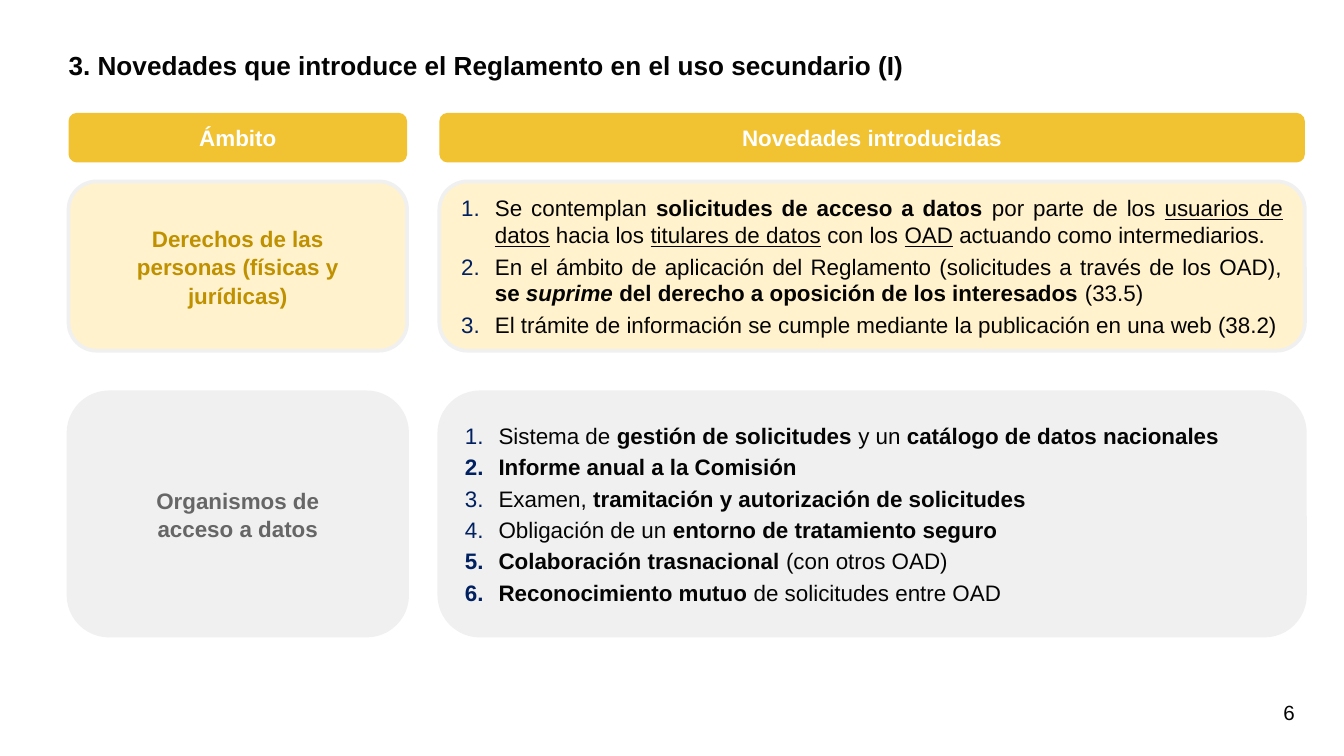
import pptx
import pptx.util
import pptx.dml.color
import pptx.enum.shapes
import pptx.enum.text
import pptx.oxml.ns
import lxml.etree

Pt = pptx.util.Pt
ALIGN = pptx.enum.text.PP_ALIGN
ANCHOR = pptx.enum.text.MSO_ANCHOR
ROUNDED = pptx.enum.shapes.MSO_SHAPE.ROUNDED_RECTANGLE

theme = {
    "font": "Arial",
    "title_size": 14, "text_size": 12, "number_size": 11,
    "text": "040404", "white": "FFFFFF", "bullet": "002060",
    "header": "F1C232", "border": "F0F0F0",
    "gold_fill": "FFF2CC", "gold_text": "BF9000",
    "gray_fill": "F0F0F0", "gray_text": "666666",
}


def color(name):
    return pptx.dml.color.RGBColor.from_string(theme[name])


def style(font, size, ink, bold=False):
    font.name = theme["font"]
    font.size = Pt(theme[size])
    font.color.rgb = color(ink)
    font.bold = bold


# Column and row grid: left, width / top, height
scope_column = (36.7, 181.4)
news_column = (235.4, 463.7)
header_top, header_height = 60.5, 26.6
label_inset = 19.4

# Each span is its text and its marks: b bold, i italic, u underlined
rows = [
    {
        "top": 97.2, "height": 90.7, "palette": "gold",
        "label": "Derechos de las personas (físicas y jurídicas)",
        "items": [
            [("Se contemplan ", ""), ("solicitudes de acceso a datos ", "b"),
             ("por parte de los ", ""), ("usuarios de datos", "u"),
             (" hacia los ", ""), ("titulares de datos", "u"),
             (" con los ", ""), ("OAD", "u"),
             (" actuando como intermediarios.", "")],
            [("En el ámbito de aplicación del Reglamento (solicitudes a través de los OAD), ", ""),
             ("se ", "b"), ("suprime", "bi"),
             (" del derecho a oposición de los interesados ", "b"), ("(33.5)", "")],
            [("El trámite de información se cumple mediante la publicación en una web (38.2)", "")],
        ],
    },
    {
        "top": 210.2, "height": 130.3, "palette": "gray",
        "label": "Organismos de acceso a datos",
        "items": [
            [("Sistema de ", ""), ("gestión de solicitudes ", "b"),
             ("y un ", ""), ("catálogo de datos nacionales", "b")],
            [("Informe anual a la Comisión", "b")],
            [("Examen, ", ""), ("tramitación y autorización de solicitudes", "b")],
            [("Obligación de un ", ""), ("entorno de tratamiento seguro", "b")],
            [("Colaboración trasnacional ", "b"), ("(con otros OAD)", "")],
            [("Reconocimiento mutuo ", "b"), ("de solicitudes entre OAD", "")],
        ],
    },
]

deck = pptx.Presentation()
deck.slide_width, deck.slide_height = Pt(720), Pt(405)
page = deck.slides.add_slide(deck.slide_layouts.get_by_name("Two Content"))
title, *lists = page.placeholders

# Title
title.left, title.top, title.width, title.height = Pt(36.7), Pt(26.6), Pt(663.8), Pt(26.6)
frame = title.text_frame
frame.text = "3. Novedades que introduce el Reglamento en el uso secundario (I)"
frame.auto_size = pptx.enum.text.MSO_AUTO_SIZE.NONE
frame.vertical_anchor = ANCHOR.TOP
frame.margin_left = frame.margin_right = frame.margin_top = frame.margin_bottom = 0
frame.paragraphs[0].alignment = ALIGN.LEFT
style(frame.paragraphs[0].runs[0].font, "title_size", "text", True)

# Column headers
for (left, width), text in [(scope_column, "Ámbito"), (news_column, "Novedades introducidas")]:
    header = page.shapes.add_shape(ROUNDED, Pt(left), Pt(header_top), Pt(width), Pt(header_height))
    header.shadow.inherit = False
    header.fill.solid()
    header.fill.fore_color.rgb = color("header")
    header.line.fill.background()
    frame = header.text_frame
    frame.text = text
    frame.vertical_anchor = ANCHOR.MIDDLE
    frame.paragraphs[0].alignment = ALIGN.CENTER
    style(frame.paragraphs[0].runs[0].font, "text_size", "white", True)

for row, body in zip(rows, lists):
    top, height = row["top"], row["height"]

    # Cards
    for left, width in (scope_column, news_column):
        card = page.shapes.add_shape(ROUNDED, Pt(left), Pt(top), Pt(width), Pt(height))
        card.shadow.inherit = False
        card.fill.solid()
        card.fill.fore_color.rgb = color(row["palette"] + "_fill")
        card.line.color.rgb = color("border")
        card.line.width = Pt(2)

    # Scope label
    left, width = scope_column
    label = page.shapes.add_textbox(Pt(left + label_inset), Pt(top),
                                    Pt(width - 2 * label_inset), Pt(height))
    frame = label.text_frame
    frame.word_wrap = True
    frame.vertical_anchor = ANCHOR.MIDDLE
    frame.text = row["label"]
    para = frame.paragraphs[0]
    para.alignment = ALIGN.CENTER
    para.line_spacing = 1.06
    style(para.runs[0].font, "text_size", row["palette"] + "_text", True)

    # Numbered list, brought in front of its card and clear of the round corners
    left, width = news_column
    page.shapes._spTree.append(body._element)
    body.left, body.top, body.width, body.height = Pt(left), Pt(top), Pt(width), Pt(height)
    frame = body.text_frame
    frame.auto_size = pptx.enum.text.MSO_AUTO_SIZE.NONE
    frame.vertical_anchor = ANCHOR.MIDDLE
    frame.margin_left = frame.margin_right = Pt(round(7.2 + 0.05 * height, 1))
    for index, item in enumerate(row["items"]):
        para = frame.add_paragraph() if index else frame.paragraphs[0]
        para.alignment = ALIGN.JUSTIFY
        para.space_before = Pt(2.4 if index else 0)
        properties = para._p.get_or_add_pPr()
        properties.set("marL", str(Pt(18)))
        properties.set("indent", str(-Pt(18)))
        bullet_color = lxml.etree.SubElement(properties, pptx.oxml.ns.qn("a:buClr"))
        lxml.etree.SubElement(bullet_color, pptx.oxml.ns.qn("a:srgbClr"), val=theme["bullet"])
        lxml.etree.SubElement(properties, pptx.oxml.ns.qn("a:buFont"), typeface=theme["font"])
        lxml.etree.SubElement(properties, pptx.oxml.ns.qn("a:buAutoNum"), type="arabicPeriod")
        for text, marks in item:
            span = para.add_run()
            span.text = text
            style(span.font, "text_size", "text", "b" in marks)
            span.font.italic = "i" in marks
            span.font.underline = "u" in marks

# Page number
number = page.shapes.add_textbox(Pt(680.4), Pt(371.5), Pt(39.6), Pt(31.7))
number.text_frame.text = "6"
style(number.text_frame.paragraphs[0].runs[0].font, "number_size", "text")

deck.save("out.pptx")
